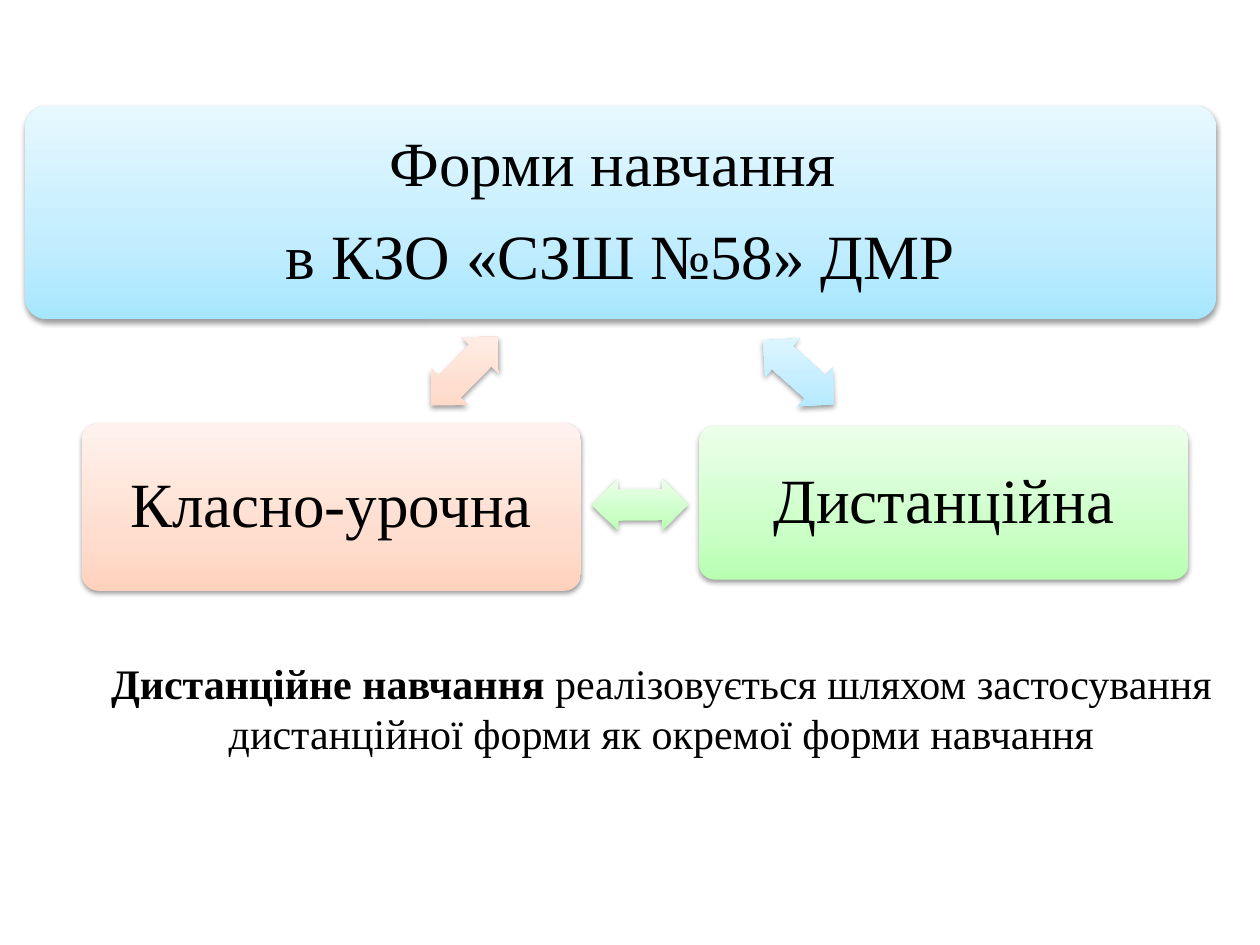
import pptx
import pptx.util
import pptx.dml.color
import pptx.enum.shapes
import pptx.enum.text
import pptx.oxml
import pptx.oxml.ns

RGB = pptx.dml.color.RGBColor
KIND = pptx.enum.shapes.MSO_SHAPE
TEXT = pptx.enum.text
Pt = pptx.util.Pt

BLACK = RGB(0, 0, 0)
# Each ramp runs from the bottom colour to the top one.
BLUE = RGB(0xA7, 0xE6, 0xFF), RGB(0xC1, 0xED, 0xFF), RGB(0xE7, 0xF8, 0xFF)
GREEN = RGB(0xB9, 0xFF, 0xB2), RGB(0xCD, 0xFF, 0xC9), RGB(0xEC, 0xFF, 0xEA)
PEACH = RGB(0xFF, 0xD2, 0xBD), RGB(0xFF, 0xDE, 0xD0), RGB(0xFF, 0xF2, 0xED)
STOPS = 0, 35, 100
FONT = "Times New Roman"

COLS, ROWS = 100, 75
CELL = pptx.util.Inches(0.1)
ARROW = 7.6, 4.1


def grid(*cells):
    return [round(n * CELL) for n in cells]


def paint(shape, ramp):
    """Give a shape an upright three-stop gradient and a soft shadow."""
    space = pptx.oxml.ns.nsdecls("a")
    stops = "".join(
        f'<a:gs pos="{pos * 1000}"><a:srgbClr val="{tone}"/></a:gs>'
        for pos, tone in zip(STOPS, ramp))
    fill = pptx.oxml.parse_xml(
        f'<a:gradFill {space} rotWithShape="0"><a:gsLst>{stops}</a:gsLst>'
        '<a:lin ang="16200000" scaled="0"/></a:gradFill>')
    glow = pptx.oxml.parse_xml(
        f'<a:outerShdw {space} blurRad="{Pt(3.1)}" dist="{Pt(1.6)}" '
        'dir="5400000" rotWithShape="0"><a:srgbClr val="000000">'
        '<a:alpha val="38000"/></a:srgbClr></a:outerShdw>')
    shape.line.fill.background()
    shape.shadow.inherit = False
    props = shape.element.spPr
    props.find(pptx.oxml.ns.qn("a:prstGeom")).addnext(fill)
    props.find(pptx.oxml.ns.qn("a:effectLst")).append(glow)


def style(para, size):
    para.alignment = TEXT.PP_ALIGN.CENTER
    para.font.name = FONT
    para.font.size = Pt(size)
    para.font.color.rgb = BLACK


def card(slide, box, ramp, lines):
    shape = slide.shapes.add_shape(KIND.ROUNDED_RECTANGLE, *grid(*box))
    shape.adjustments[0] = 0.1
    paint(shape, ramp)
    frame = shape.text_frame
    frame.word_wrap = True
    frame.vertical_anchor = TEXT.MSO_ANCHOR.MIDDLE
    for side in ("left", "top", "right", "bottom"):
        setattr(frame, f"margin_{side}", pptx.util.Inches(0.15))
    frame.text = "\n".join(lines)
    for para in frame.paragraphs:
        para.line_spacing = 0.9
        para.space_after = Pt(14.5)
        style(para, 36)


def arrow(slide, left, top, turn, ramp):
    shape = slide.shapes.add_shape(
        KIND.LEFT_RIGHT_ARROW, *grid(left, top, *ARROW))
    shape.adjustments[0] = 0.6
    shape.adjustments[1] = 0.5
    shape.rotation = turn
    paint(shape, ramp)


def cycle(slide, left, top, wide, high):
    """Place the heading card, the two forms and the arrows between them."""
    card(slide, (left, top, wide, 0.44 * high), BLUE,
         ["Форми навчання ", "в КЗО «СЗШ №58» ДМР"])
    card(slide, (left + 53.5, top + 25.4, 38.8, 12.2), GREEN, ["Дистанційна"])
    card(slide, (left + 4.5, top + 25.2, 39.6, 13.3), PEACH,
         ["Класно-урочна"])
    for x, y, turn, ramp in ((57.6, 19.1, 41.9, BLUE),
                             (45, 29.6, 179.6, GREEN),
                             (31.1, 19, 314.3, PEACH)):
        arrow(slide, left + x, top + y, turn, ramp)


def note(slide, *box):
    frame = slide.shapes.add_textbox(*grid(*box)).text_frame
    frame.word_wrap = True
    para = frame.paragraphs[0]
    style(para, 24)
    term = para.add_run()
    term.text = "Дистанційне навчання "
    term.font.bold = True
    para.add_run().text = ("реалізовується шляхом застосування "
                           "дистанційної форми як окремої форми навчання")


def main():
    deck = pptx.Presentation()
    deck.slide_width, deck.slide_height = grid(COLS, ROWS)
    slide = deck.slides.add_slide(deck.slide_layouts[6])
    note(slide, 7.5, 51.7, 90, 10.7)
    cycle(slide, 2, 8.4, 94.5, 38.5)
    deck.save("out.pptx")


if __name__ == "__main__":
    main()
